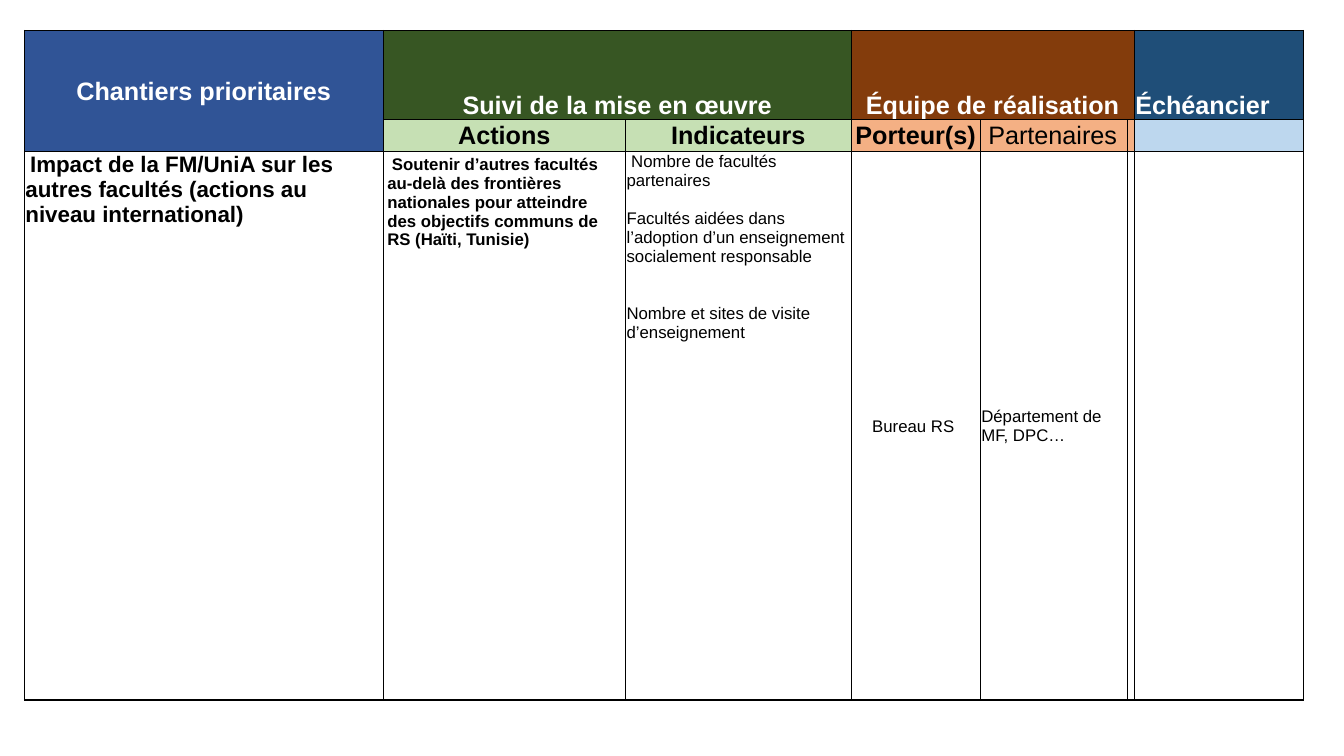
from dataclasses import dataclass

from lxml import etree
from pptx import Presentation
from pptx import util as u
from pptx.dml.color import RGBColor
from pptx.enum import text
from pptx.oxml import ns

FONT = "Arial"
BLACK, WHITE = "000000", "FFFFFF"
BLUE, GREEN, BROWN, NAVY = "305496", "375623", "833C0C", "1F4E78"
PALE_GREEN, PALE_ORANGE, PALE_BLUE = "C6E0B4", "F4B084", "BDD7EE"
LINE = 13.8  # height of one 12 pt line, in points

LEFT, CENTER = text.PP_ALIGN.LEFT, text.PP_ALIGN.CENTER
TOP, MIDDLE, BOTTOM = (text.MSO_ANCHOR.TOP, text.MSO_ANCHOR.MIDDLE,
                       text.MSO_ANCHOR.BOTTOM)

HEADER_EDGES = {"L": 0.5, "R": 0.5, "T": 0.5, "B": 0.5}
SUBHEAD_EDGES = {"L": 0.5, "R": 0.5, "T": 0.5, "B": 1}
BODY_EDGES = {"L": 0.5, "R": 0.5, "T": 1, "B": 2}


@dataclass
class Para:
    text: str
    lead: str = ""      # small indent set before the text
    blank_lines: int = 0


@dataclass
class Cell:
    row: int
    col: int
    paras: tuple[Para, ...] = ()
    fill: str = ""
    size: int = 18
    bold: bool = True
    color: str = BLACK
    align: text.PP_ALIGN = CENTER
    anchor: text.MSO_ANCHOR = MIDDLE
    rows: int = 1
    cols: int = 1
    inset: float = 0.03


def header(col: int, label: str, fill: str, **options) -> Cell:
    settings = {"anchor": BOTTOM, "color": WHITE, **options}
    return Cell(0, col, (Para(label),), fill, **settings)


def subhead(col: int, label: str, fill: str, **options) -> Cell:
    return Cell(1, col, (Para(label),) if label else (), fill, **options)


def body(col: int, *paras: Para, **options) -> Cell:
    settings = {"size": 12, "bold": False, "align": LEFT, "anchor": TOP, **options}
    return Cell(2, col, paras, **settings)


COLUMNS = (9.05, 6.1, 5.69, 3.25, 3.72, 0.11, 4.26)
ROWS = (2.25, 0.76, 13.82)

CELLS = (
    # Headers
    header(0, "Chantiers prioritaires", BLUE, anchor=MIDDLE, rows=2),
    header(1, "Suivi de la mise en œuvre", GREEN, cols=2),
    header(3, "Équipe de réalisation", BROWN, cols=3),
    header(6, "Échéancier", NAVY, align=LEFT),
    # Subheads
    subhead(1, "Actions", PALE_GREEN),
    subhead(2, "Indicateurs", PALE_GREEN),
    subhead(3, "Porteur(s)", PALE_ORANGE),
    subhead(4, " Partenaires", PALE_ORANGE, bold=False, align=LEFT),
    subhead(5, "", PALE_ORANGE),
    subhead(6, "", PALE_BLUE),
    # Body
    body(0, Para("Impact de la FM/UniA sur les autres facultés "
                 "(actions au niveau international)", lead=" "),
         size=16, bold=True),
    body(1, Para("Soutenir d’autres facultés au-delà des frontières nationales pour "
                 "atteindre des objectifs communs de RS (Haïti, Tunisie)", lead=" "),
         bold=True, inset=0.1),
    body(2, Para(" Nombre de facultés partenaires"),
         Para("Facultés aidées dans l’adoption d’un enseignement "
              "socialement responsable", blank_lines=1),
         Para("Nombre et sites de visite d’enseignement", blank_lines=2)),
    body(3, Para("Bureau RS "), align=CENTER, anchor=MIDDLE),
    body(4, Para("Département de MF, DPC…"), anchor=MIDDLE),
    body(5),
    body(6),
)


def rgb(value: str) -> RGBColor:
    return RGBColor.from_string(value)


def set_borders(cell, edges: dict[str, float]) -> None:
    tc_pr = cell._tc.get_or_add_tcPr()
    for index, (side, width) in enumerate(edges.items()):
        ln = etree.Element(ns.qn(f"a:ln{side}"), w=str(int(u.Pt(width))))
        fill = etree.SubElement(ln, ns.qn("a:solidFill"))
        etree.SubElement(fill, ns.qn("a:srgbClr"), val=BLACK)
        tc_pr.insert(index, ln)


def write_paragraph(p, para: Para, item: Cell) -> None:
    p.alignment = item.align
    p.space_before = u.Pt(para.blank_lines * LINE)
    for content, size in ((para.lead, 12), (para.text, item.size)):
        if content:
            r = p.add_run()
            r.text = content
            r.font.name = FONT
            r.font.size = u.Pt(size)
            r.font.bold = item.bold
            r.font.color.rgb = rgb(item.color)


def draw_cell(table, item: Cell) -> None:
    cell = table.cell(item.row, item.col)
    if item.rows > 1 or item.cols > 1:
        cell.merge(table.cell(item.row + item.rows - 1, item.col + item.cols - 1))
    cell.vertical_anchor = item.anchor
    cell.margin_left = cell.margin_right = cell.margin_top = u.Cm(item.inset)
    cell.margin_bottom = u.Cm(item.inset if item.inset > 0.03 else 0)
    if item.fill:
        cell.fill.solid()
        cell.fill.fore_color.rgb = rgb(item.fill)
    tf = cell.text_frame
    for index, para in enumerate(item.paras):
        p = tf.add_paragraph() if index else tf.paragraphs[0]
        write_paragraph(p, para, item)


def main() -> None:
    prs = Presentation()
    prs.slide_width, prs.slide_height = u.Cm(33.87), u.Cm(19.05)
    slide = prs.slides.add_slide(prs.slide_layouts[6])

    # Table grid
    sp = slide.shapes.add_table(len(ROWS), len(COLUMNS), u.Cm(0.61), u.Cm(0.76),
                                u.Cm(sum(COLUMNS)), u.Cm(sum(ROWS)))
    table = sp.table
    table.first_row = table.horz_banding = False
    for column, width in zip(table.columns, COLUMNS):
        column.width = u.Cm(width)
    for row, height, edges in zip(table.rows, ROWS,
                                  (HEADER_EDGES, SUBHEAD_EDGES, BODY_EDGES)):
        row.height = u.Cm(height)
        for cell in row.cells:
            set_borders(cell, edges)
            cell.fill.background()
            cell.margin_left = cell.margin_right = 0
            cell.margin_top = cell.margin_bottom = 0

    # Cell contents
    for item in CELLS:
        draw_cell(table, item)

    prs.save("out.pptx")


if __name__ == "__main__":
    main()
